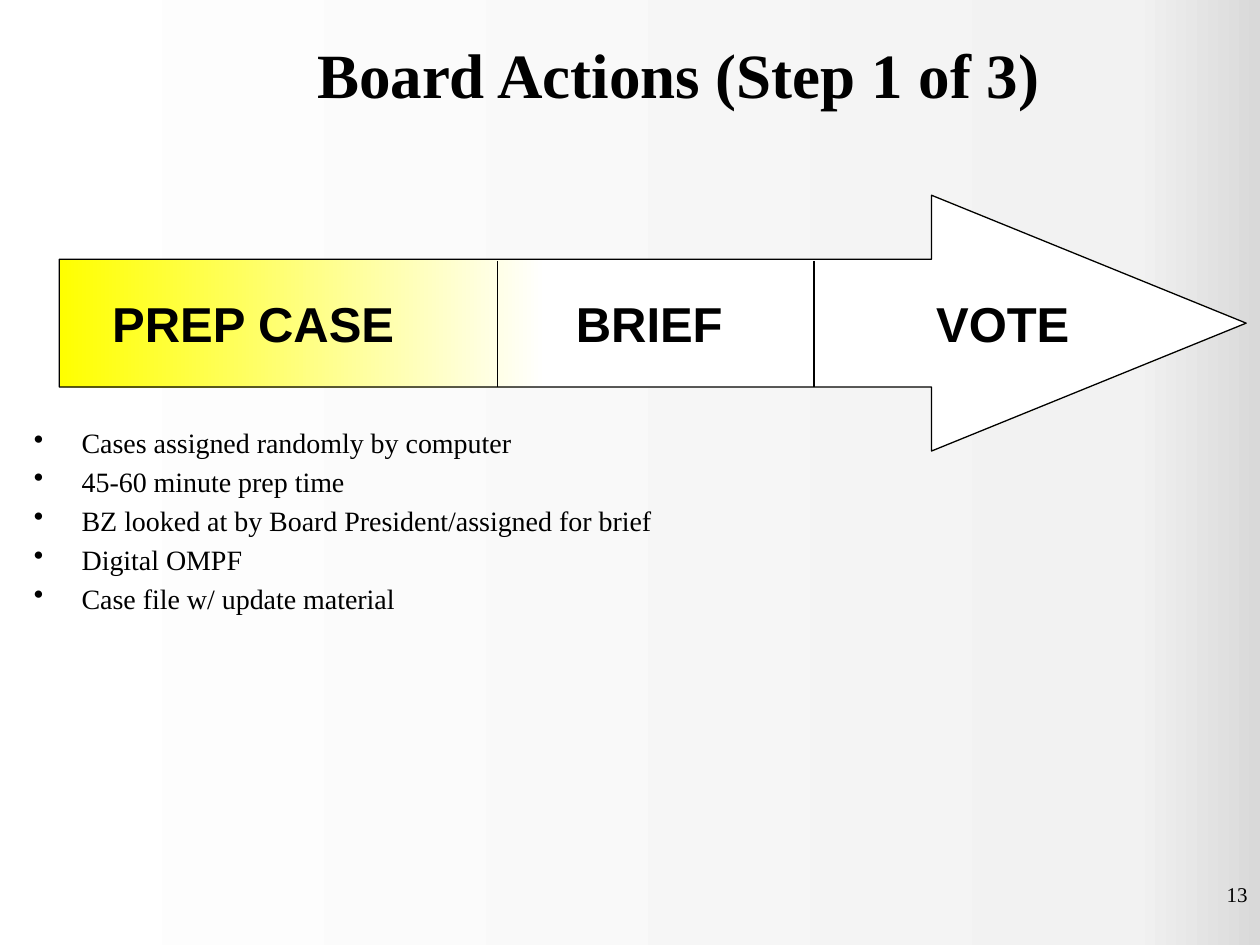
from lxml import etree
from pptx import Presentation
from pptx.dml.color import RGBColor
from pptx.enum import shapes, text
from pptx.oxml.ns import qn
from pptx.util import Inches, Pt

BLACK = RGBColor(0x00, 0x00, 0x00)
WHITE = RGBColor(0xFF, 0xFF, 0xFF)
YELLOW = RGBColor(0xFF, 0xFF, 0x00)
PALE_GREY = RGBColor(0xF2, 0xF2, 0xF2)
GREY = RGBColor(0xD9, 0xD9, 0xD9)
SERIF = "Times New Roman"
SANS = "Arial"

BULLETS = [
    "Cases assigned randomly by computer",
    "45-60 minute prep time",
    "BZ looked at by Board President/assigned for brief",
    "Digital OMPF",
    "Case file w/ update material",
]
STAGES = ["PREP CASE", "BRIEF", "VOTE"]
STAGE_TABS = [3.68, 6.54]
DIVIDERS = [3.95, 6.46]


def set_gradient(fill, element, stops):
    fill.gradient()
    fill.gradient_angle = 0
    stop_list = element.find(".//" + qn("a:gsLst"))
    for stop in list(stop_list):
        stop_list.remove(stop)
    for percent, color in stops:
        stop = etree.SubElement(stop_list, qn("a:gs"), pos=str(percent * 1000))
        etree.SubElement(stop, qn("a:srgbClr"), val=str(color))


def add_bullet(para, indent):
    properties = para._p.get_or_add_pPr()
    properties.set("marL", str(indent))
    properties.set("indent", str(-indent))
    etree.SubElement(properties, qn("a:buChar"), char="•")


def add_tabs(para, positions):
    tab_list = etree.SubElement(para._p.get_or_add_pPr(), qn("a:tabLst"))
    for position in positions:
        etree.SubElement(tab_list, qn("a:tab"), pos=str(Inches(position)), algn="l")


def write_text(shape, lines, size, font=SERIF, bold=False, align=text.PP_ALIGN.LEFT,
               anchor=text.MSO_ANCHOR.TOP, before=0, bullet_indent=None, tabs=()):
    frame = shape.text_frame
    frame.word_wrap = True
    frame.vertical_anchor = anchor
    for index, line in enumerate(lines):
        para = frame.add_paragraph() if index else frame.paragraphs[0]
        para.alignment = align
        if index:
            para.space_before = Pt(before)
        if bullet_indent:
            add_bullet(para, Inches(bullet_indent))
        if tabs:
            add_tabs(para, tabs)
        span = para.add_run()
        span.text = line
        span.font.name = font
        span.font.size = Pt(size)
        span.font.bold = bold
        span.font.color.rgb = BLACK


def add_text(page, left, top, width, height, lines, size, **style):
    box = page.shapes.add_textbox(Inches(left), Inches(top), Inches(width), Inches(height))
    write_text(box, lines, size, **style)


def set_outline(line):
    line.color.rgb = BLACK
    line.width = Pt(0.75)


def add_divider(group, x, top, bottom):
    divider = group.shapes.add_connector(
        shapes.MSO_CONNECTOR.STRAIGHT, Inches(x), Inches(top), Inches(x), Inches(bottom))
    set_outline(divider.line)
    etree.SubElement(divider._element.spPr, qn("a:effectLst"))


def add_process_arrow(page):
    group = page.shapes.add_group_shape()
    arrow = group.shapes.add_shape(
        shapes.MSO_SHAPE.RIGHT_ARROW, Inches(0.47), Inches(1.55), Inches(9.42), Inches(2.03))
    arrow.adjustments[0] = 0.5
    arrow.adjustments[1] = 1.23
    arrow.shadow.inherit = False
    set_gradient(arrow.fill, arrow._element, [(0, YELLOW), (41, WHITE)])
    set_outline(arrow.line)
    arrow.text_frame.margin_left = Inches(0.42)
    arrow.text_frame.margin_right = 0
    write_text(arrow, ["\t".join(STAGES)], 28, font=SANS, bold=True,
               anchor=text.MSO_ANCHOR.MIDDLE, tabs=STAGE_TABS)
    for x in DIVIDERS:
        add_divider(group, x, 2.07, 3.07)


def main():
    deck = Presentation()
    deck.slide_width = Inches(10)
    deck.slide_height = Inches(7.5)
    page = deck.slides.add_slide(deck.slide_layouts[6])
    set_gradient(page.background.fill, page.element,
                 [(0, WHITE), (90, PALE_GREY), (100, GREY)])
    add_text(page, 1.17, 0, 8.43, 1.17, ["Board Actions (Step 1 of 3)"], 36, bold=True,
             align=text.PP_ALIGN.CENTER, anchor=text.MSO_ANCHOR.MIDDLE)
    add_text(page, 0.17, 3.33, 8.5, 3.83, BULLETS, 16, before=3, bullet_indent=0.38)
    add_process_arrow(page)
    add_text(page, 7.67, 6.95, 2.33, 0.4, ["13"], 12, align=text.PP_ALIGN.RIGHT)
    deck.save("out.pptx")


if __name__ == "__main__":
    main()
